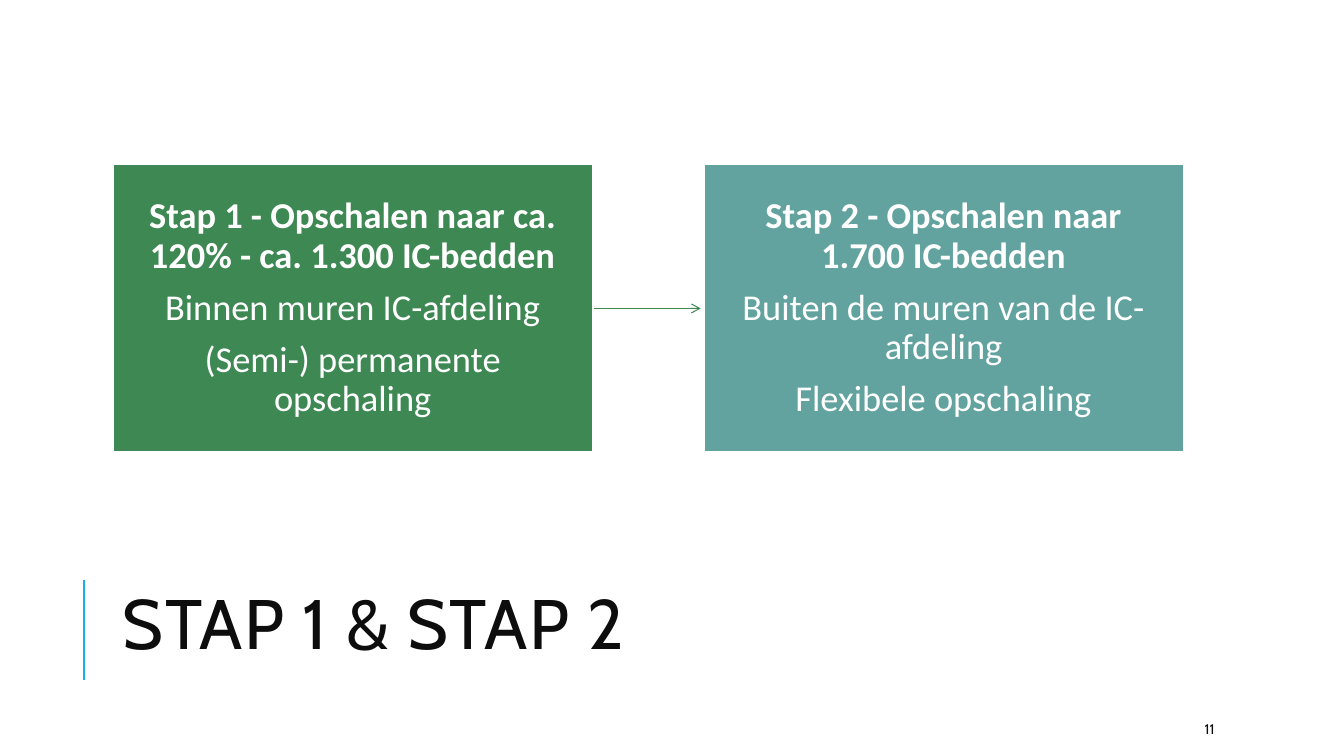
"""Build the slide that shows step 1 leading to step 2."""
from lxml import etree
from pptx import Presentation
from pptx import util as u
from pptx.dml.color import RGBColor
from pptx.enum import shapes, text
from pptx.oxml.ns import qn

PX = 9144
THEME = {
    "ink": "0D0D0D", "white": "FFFFFF", "blue": "1CADE4",
    "green": "3E8853", "teal": "62A39F",
    "head": "Cabin", "body": "Calibri",
    "title": 50, "step": 26, "page": 10,
}

deck = Presentation()
deck.slide_width, deck.slide_height = 1333 * PX, 750 * PX
slide = deck.slides.add_slide(deck.slide_layouts[6])


def write(shape, lines, font, size, color):
    frame = shape.text_frame
    frame.word_wrap = True
    frame.vertical_anchor = text.MSO_ANCHOR.MIDDLE
    frame.text = "\n".join(lines)
    for para in frame.paragraphs:
        for run in para.runs:
            run.font.name = THEME[font]
            run.font.size = u.Pt(THEME[size])
            run.font.color.rgb = RGBColor.from_string(THEME[color])
    return frame


def draw(x1, y1, x2, y2, color, width):
    line = slide.shapes.add_connector(
        shapes.MSO_CONNECTOR.STRAIGHT, x1 * PX, y1 * PX, x2 * PX, y2 * PX)
    line.line.color.rgb = RGBColor.from_string(THEME[color])
    line.line.width = u.Pt(width)
    etree.SubElement(line._element.spPr, qn("a:effectLst"))
    return line


title = slide.shapes.add_textbox(112 * PX, 542 * PX, 1063 * PX, 164 * PX)
para = write(title, ["STAP 1 & STAP 2"], "head", "title", "ink").paragraphs[0]
para.line_spacing = 0.8
para.runs[0].font._element.set("spc", "100")
draw(83, 675, 83, 575, "blue", 1.5)

arrow = draw(588, 306, 695, 306, "green", 0.75)
etree.SubElement(arrow.line._get_or_add_ln(), qn("a:tailEnd"), type="arrow")

steps = [
    ("green", ["Stap 1 - Opschalen naar ca. 120% - ca. 1.300 IC-bedden",
               "Binnen muren IC-afdeling",
               "(Semi-) permanente opschaling"]),
    ("teal", ["Stap 2 - Opschalen naar 1.700 IC-bedden",
              "Buiten de muren van de IC-afdeling",
              "Flexibele opschaling"]),
]
for i, (color, lines) in enumerate(steps):
    box = slide.shapes.add_shape(
        shapes.MSO_SHAPE.RECTANGLE,
        (112 + 586 * i) * PX, 163 * PX, 476 * PX, 286 * PX)
    box.shadow.inherit = False
    box.fill.solid()
    box.fill.fore_color.rgb = RGBColor.from_string(THEME[color])
    box.line.color.rgb = RGBColor.from_string(THEME["white"])
    box.line.width = u.Pt(1.5)
    frame = write(box, lines, "body", "step", "white")
    frame.margin_left = frame.margin_right = 23 * PX
    frame.margin_top = frame.margin_bottom = 25 * PX
    for para in frame.paragraphs:
        para.alignment = text.PP_ALIGN.CENTER
        para.line_spacing = 0.9
        para.space_after = u.Pt(9)
    frame.paragraphs[0].runs[0].font.bold = True

page = slide.shapes.add_textbox(1185 * PX, 708 * PX, 106 * PX, 30 * PX)
write(page, ["11"], "head", "page", "ink")

deck.save("out.pptx")
